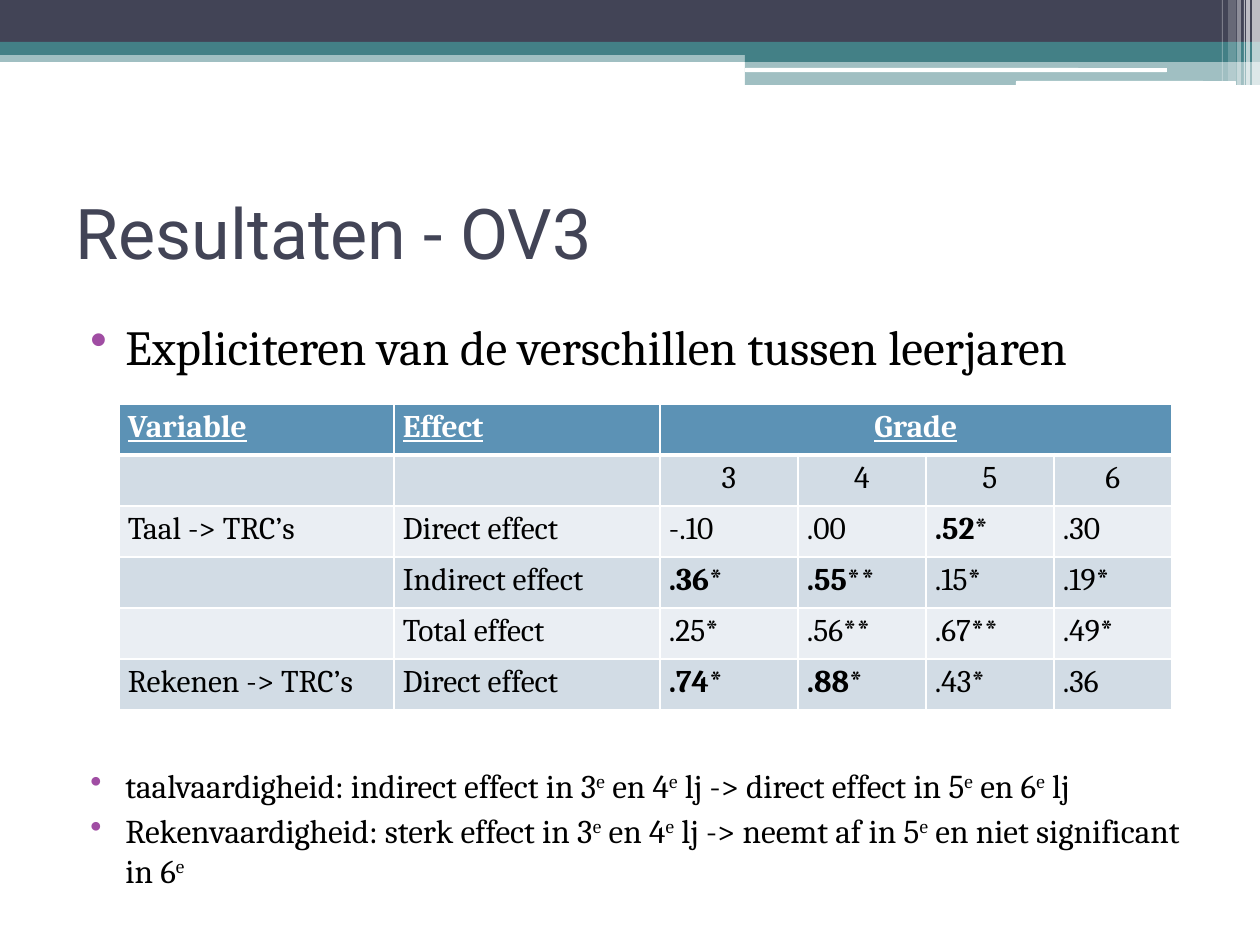
from lxml import etree
from pptx import Presentation
from pptx.dml.color import RGBColor
from pptx.enum.shapes import MSO_SHAPE
from pptx.enum.text import MSO_ANCHOR, PP_ALIGN
from pptx.oxml.ns import qn
from pptx.util import Emu, Pt

RECTANGLE = MSO_SHAPE.RECTANGLE
ROUNDED = MSO_SHAPE.ROUNDED_RECTANGLE
MIDDLE = MSO_ANCHOR.MIDDLE
TOP = MSO_ANCHOR.TOP
CENTER = PP_ALIGN.CENTER
LEFT = PP_ALIGN.LEFT

WHITE = RGBColor(0xFF, 0xFF, 0xFF)
BLACK = RGBColor(0x00, 0x00, 0x00)
SLATE = RGBColor(0x42, 0x44, 0x56)
TEAL = RGBColor(0x43, 0x80, 0x86)
PURPLE = RGBColor(0xA0, 0x4D, 0xA3)
HEADER_BLUE = RGBColor(0x5C, 0x92, 0xB5)
BAND_DARK = RGBColor(0xD2, 0xDC, 0xE5)
BAND_LIGHT = RGBColor(0xEA, 0xEE, 0xF3)

BANNER = [
    (RECTANGLE, (0, 50, 1260, 12), TEAL, 50),
    (RECTANGLE, (0, 0, 1260, 43), SLATE, 100),
    (RECTANGLE, (0, 42, 1260, 13), TEAL, 100),
    (RECTANGLE, (745, 49, 515, 13), TEAL, 100),
    (RECTANGLE, (745, 61, 515, 24), TEAL, 50),
    (ROUNDED, (745, 68, 422, 4), WHITE, 100),
    (ROUNDED, (1016, 81, 220, 5), WHITE, 100),
    (RECTANGLE, (1252, 0, 8, 86), WHITE, 65),
    (RECTANGLE, (1246, 0, 4, 86), WHITE, 65),
    (RECTANGLE, (1244, 0, 1, 86), WHITE, 60),
    (RECTANGLE, (1237, 0, 4, 86), WHITE, 40),
    (RECTANGLE, (1228, 0, 8, 81), WHITE, 20),
    (RECTANGLE, (1222, 0, 1, 81), WHITE, 30),
]

TITLE = "Resultaten - OV3"
TITLE_BOX = (63, 158, 1134, 147)
TITLE_FORMAT = {"name": "Roboto", "size": Pt(40)}

BODY_BOX = (63, 310, 1134, 596)
BULLETS = [
    ("Expliciteren van de verschillen tussen leerjaren", 28, 3),
    ("taalvaardigheid: indirect effect in 3^e^ en 4^e^ lj -> direct effect in 5^e^ en 6^e^ lj", 19, 223),
    ("Rekenvaardigheid: sterk effect in 3^e^ en 4^e^ lj -> neemt af in 5^e^ en niet significant in 6^e^", 19, 3),
]

TABLE_ORIGIN = (119, 404)
COLUMN_WIDTHS = [275, 266, 138, 128, 128, 118]
ROW_HEIGHT = 51
ROWS = [
    ["Variable", "Effect", "Grade", "", "", ""],
    ["", "", "3", "4", "5", "6"],
    ["Taal -> TRC’s", "Direct effect", "-.10", ".00", ".52*", ".30"],
    ["", "Indirect effect", ".36*", ".55**", ".15*", ".19*"],
    ["", "Total effect", ".25*", ".56**", ".67**", ".49*"],
    ["Rekenen -> TRC’s", "Direct effect", ".74*", ".88*", ".43*", ".36"],
]
BOLD_CELLS = {(2, 4), (3, 2), (3, 3), (5, 2), (5, 3)}
CELL_FORMAT = {"name": "Cambria", "size": Pt(18)}
CELL_MARGINS = {"margin_left": 9, "margin_right": 9, "margin_top": 0, "margin_bottom": 0}


def px(value):
    return Emu(round(value * 914400 / 126))


def box(values):
    return [px(value) for value in values]


def add_run(paragraph, text, color, values):
    run = paragraph.add_run()
    run.text = text
    run.font.color.rgb = color
    for name, value in values.items():
        setattr(run.font, name, value)
    return run


def add_color(parent, color, opacity=100):
    element = etree.SubElement(parent, qn("a:srgbClr"), val=str(color))
    if opacity < 100:
        etree.SubElement(element, qn("a:alpha"), val=str(opacity * 1000))


def add_banner(slide):
    for kind, place, color, opacity in BANNER:
        shape = slide.shapes.add_shape(kind, *box(place))
        shape.shadow.inherit = False
        shape.line.fill.background()
        shape.fill.solid()
        shape.fill.fore_color.rgb = color
        if opacity < 100:
            fill = shape._element.spPr.find(qn("a:solidFill"))
            fill.clear()
            add_color(fill, color, opacity)


def add_text_frame(slide, place, anchor):
    frame = slide.shapes.add_textbox(*box(place)).text_frame
    frame.word_wrap = True
    frame.vertical_anchor = anchor
    return frame


def add_bullets(slide):
    frame = add_text_frame(slide, BODY_BOX, TOP)
    for index, (text, size, space_before) in enumerate(BULLETS):
        paragraph = frame.add_paragraph() if index else frame.paragraphs[0]
        paragraph.space_before = Pt(space_before)
        properties = paragraph._p.get_or_add_pPr()
        properties.set("marL", str(px(50)))
        properties.set("indent", str(px(-35)))
        add_color(etree.SubElement(properties, qn("a:buClr")), PURPLE)
        etree.SubElement(properties, qn("a:buChar"), char="•")
        for position, piece in enumerate(text.split("^")):
            if piece:
                run = add_run(paragraph, piece, BLACK, {"name": "Cambria", "size": Pt(size)})
                if position % 2:
                    run._r.get_or_add_rPr().set("baseline", "30000")


def set_borders(cell, header):
    properties = cell._tc.get_or_add_tcPr()
    for index, side in enumerate(("lnL", "lnR", "lnT", "lnB")):
        width = Pt(3 if header and side == "lnB" else 1)
        line = etree.Element(qn(f"a:{side}"), w=str(width))
        add_color(etree.SubElement(line, qn("a:solidFill")), WHITE)
        properties.insert(index, line)


def fill_cell(cell, row, column, text):
    header = row == 0
    cell.fill.solid()
    cell.fill.fore_color.rgb = HEADER_BLUE if header else (BAND_LIGHT, BAND_DARK)[row % 2]
    for name, value in CELL_MARGINS.items():
        setattr(cell, name, px(value))
    set_borders(cell, header)
    if text:
        paragraph = cell.text_frame.paragraphs[0]
        paragraph.alignment = CENTER if row < 2 and column > 1 else LEFT
        paragraph.line_spacing = 1.15
        paragraph.space_after = Pt(10)
        emphasis = {"bold": header or (row, column) in BOLD_CELLS, "underline": header}
        add_run(paragraph, text, WHITE if header else BLACK, CELL_FORMAT | emphasis)


def add_effect_table(slide):
    size = (sum(COLUMN_WIDTHS), ROW_HEIGHT * len(ROWS))
    table = slide.shapes.add_table(len(ROWS), len(COLUMN_WIDTHS), *box(TABLE_ORIGIN + size)).table
    for column, width in zip(table.columns, COLUMN_WIDTHS):
        column.width = px(width)
    for row, texts in enumerate(ROWS):
        table.rows[row].height = px(ROW_HEIGHT)
        for column, text in enumerate(texts):
            fill_cell(table.cell(row, column), row, column, text)
    table.cell(0, 2).merge(table.cell(0, 5))


def main():
    presentation = Presentation()
    presentation.slide_width = px(1260)
    presentation.slide_height = px(945)
    slide = presentation.slides.add_slide(presentation.slide_layouts[6])
    add_banner(slide)
    title = add_text_frame(slide, TITLE_BOX, MIDDLE)
    add_run(title.paragraphs[0], TITLE, SLATE, TITLE_FORMAT)
    add_bullets(slide)
    add_effect_table(slide)
    presentation.save("out.pptx")


if __name__ == "__main__":
    main()
